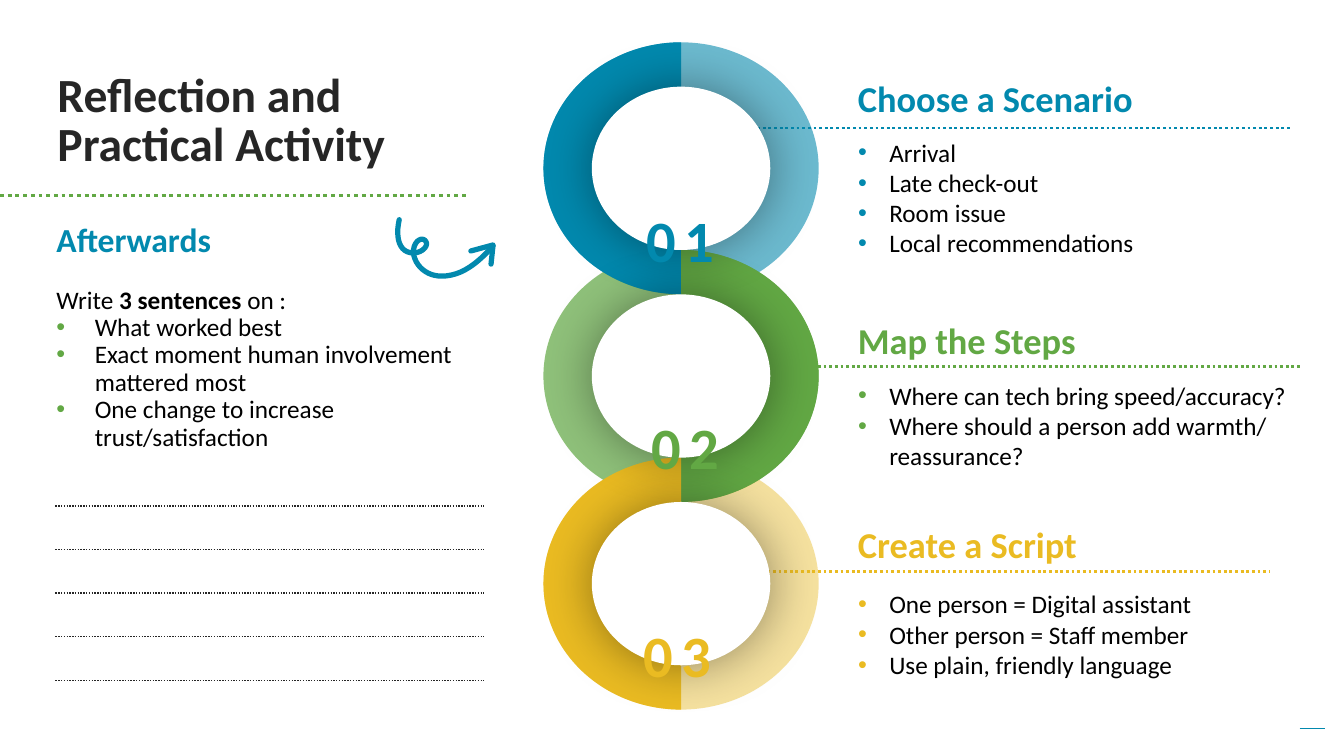
from dataclasses import dataclass
from math import cos, pi, sin

from lxml import etree
from pptx import Presentation
from pptx.dml.color import RGBColor
from pptx.enum.dml import MSO_LINE
from pptx.enum.shapes import MSO_CONNECTOR, MSO_SHAPE
from pptx.enum.text import MSO_ANCHOR, MSO_AUTO_SIZE, PP_ALIGN
from pptx.oxml.ns import qn
from pptx.util import Pt

PX = 9144  # EMU per px, 100 px to the inch
DOTTED = MSO_LINE.ROUND_DOT
STRAIGHT = MSO_CONNECTOR.STRAIGHT
OVAL = MSO_SHAPE.OVAL
TOP = MSO_ANCHOR.TOP
FIXED = MSO_AUTO_SIZE.NONE
LEFT, CENTER = PP_ALIGN.LEFT, PP_ALIGN.CENTER

FONT = "Calibri"
BLUE, GREEN, YELLOW = "0289AE", "62A844", "EABB22"
INK, BLACK, WHITE = "262626", "000000", "FFFFFF"


@dataclass
class Step:
    number: str
    color: str
    light_opacity: int  # percent, for the pale half of the ring
    dark_side: int  # -1 left, 1 right
    number_center: int
    rule: tuple  # x from, x to, y
    heading: str
    heading_top: int
    tasks: list
    tasks_box: tuple


STEPS = [
    Step("01", BLUE, 58, -1, 675, (751, 1279, 127), "Choose a Scenario", 67,
         ["Arrival", "Late check-out", "Room issue", "Local recommendations"],
         (841, 131, 420, 131)),
    Step("02", GREEN, 71, 1, 680, (761, 1289, 364), "Map the Steps", 307,
         ["Where can tech bring speed/accuracy?",
          "Where should a person add warmth/ reassurance?"],
         (841, 372, 471, 101)),
    Step("03", YELLOW, 43, -1, 672, (733, 1260, 567), "Create a Script", 509,
         ["One person = Digital assistant", "Other person = Staff member",
          "Use plain, friendly language"],
         (841, 579, 460, 131)),
]


def rgb(code):
    return RGBColor.from_string(code)


def px(*lengths):
    return [round(length * PX) for length in lengths]


def prepare(shape, box):
    """Place a text shape in its box with plain top-aligned wrapping."""
    shape.left, shape.top, shape.width, shape.height = px(*box)
    frame = shape.text_frame
    frame.word_wrap = True
    frame.auto_size = FIXED
    frame.vertical_anchor = TOP
    return frame


def new_frame(slide, box):
    return prepare(slide.shapes.add_textbox(*px(*box)), box)


def add_text(frame, text, *, size, color=BLACK, bold=False, align=LEFT, spacing=1.0,
             before=0, bullet=None, indent=0, raised=0, tracking=0):
    """Add one paragraph; words between ** marks are bold."""
    paragraph = frame.paragraphs[0] if not frame.text else frame.add_paragraph()
    paragraph.alignment = align
    paragraph.line_spacing = spacing
    paragraph.space_before, paragraph.space_after = Pt(before), Pt(0)
    props = paragraph._p.get_or_add_pPr()
    props.set("marL", str(indent * PX))
    props.set("indent", str(-indent * PX))
    if bullet:
        tint = etree.SubElement(props, qn("a:buClr"))
        etree.SubElement(tint, qn("a:srgbClr")).set("val", bullet)
        etree.SubElement(props, qn("a:buFont")).set("typeface", "Arial")
        etree.SubElement(props, qn("a:buChar")).set("char", "•")
    else:
        etree.SubElement(props, qn("a:buNone"))
    for position, words in enumerate(text.split("**")):
        run = paragraph.add_run()
        run.text = words
        run.font.name, run.font.size = FONT, Pt(size)
        run.font.bold = bold or position % 2 == 1
        run.font.color.rgb = rgb(color)
        if raised:
            run.font._element.set("baseline", str(raised * 1000))
        if tracking:
            run.font._element.set("spc", str(tracking * 100))


def add_rule(slide, x1, x2, y, color, weight, dotted=True):
    rule = slide.shapes.add_connector(STRAIGHT, *px(x1, y, x2, y))
    rule.line.color.rgb = rgb(color)
    rule.line.width = Pt(weight)
    if dotted:
        rule.line.dash_style = DOTTED
    etree.SubElement(rule._element.spPr, qn("a:effectLst"))


def paint(shape, color, opacity=100):
    shape.shadow.inherit = False
    shape.fill.solid()
    shape.fill.fore_color.rgb = rgb(color)
    shape.line.fill.background()
    if opacity < 100:
        tint = shape._element.spPr.find(qn("a:solidFill"))[0]
        etree.SubElement(tint, qn("a:alpha")).set("val", str(opacity * 1000))


def add_glow(shape, opacity, blur):
    effects = shape._element.spPr.find(qn("a:effectLst"))
    shadow = etree.SubElement(effects, qn("a:outerShdw"), blurRad=str(Pt(blur)),
                              dist="0", dir="0", algn="ctr", rotWithShape="0")
    tint = etree.SubElement(shadow, qn("a:srgbClr"), val=BLACK)
    etree.SubElement(tint, qn("a:alpha")).set("val", str(opacity * 1000))


def add_outline(slide, points, close):
    start, *rest = [px(*point) for point in points]
    builder = slide.shapes.build_freeform(*start, scale=1.0)
    builder.add_line_segments(rest, close=close)
    return builder.convert_to_shape()


def add_half_ring(slide, box, side, color):
    left, top, width, height = box
    angles = [pi * i / 90 - pi / 2 for i in range(91)]
    points = [(left + width / 2 * (1 + side * cos(a)), top + height / 2 * (1 + sin(a)))
              for a in angles]
    paint(add_outline(slide, points, close=True), color)


def add_ring_chain(slide, left, top, pitch=206, width=273, height=250):
    boxes = [(left, top + i * pitch, width, height) for i in range(len(STEPS))]
    rings = list(zip(STEPS, boxes))
    # Pale rings and the rules that start inside them
    for step, box in rings:
        paint(slide.shapes.add_shape(OVAL, *px(*box)), step.color, step.light_opacity)
    for step in STEPS:
        add_rule(slide, *step.rule, step.color, 2)
    # Strong halves
    for step, box in rings:
        add_half_ring(slide, box, step.dark_side, step.color)
    # White holes, the middle one in front
    for _, (x, y, w, h) in (rings[0], rings[2], rings[1]):
        hole = slide.shapes.add_shape(OVAL, *px(x + 48, y + 44, w - 96, h - 88))
        paint(hole, WHITE)
        add_glow(hole, 40, 37)
    # Numbers
    for step, (_, y, _, _) in rings:
        frame = new_frame(slide, (step.number_center - 88, y + 83, 176, 148))
        add_text(frame, step.number, size=72, color=step.color, bold=True, align=CENTER,
                 spacing=1.5, raised=30, tracking=6)


def add_step_text(slide, placeholder, step):
    heading = new_frame(slide, (841, step.heading_top, 448, 56))
    add_text(heading, step.heading, size=26, color=step.color, bold=True,
             spacing=Pt(33.8))
    tasks = prepare(placeholder, step.tasks_box)
    for task in step.tasks:
        add_text(tasks, task, size=18, bullet=step.color, indent=31)


def add_title(slide, box):
    add_text(prepare(slide.shapes.title, box), "Reflection and Practical Activity",
             size=34, color=INK, bold=True, spacing=Pt(35.2))
    add_rule(slide, 0, box[0] + box[2], box[1] + 127, GREEN, 2.75)


def add_afterwards(slide, placeholder, box):
    left, top, width, _ = box
    line = Pt(19.6)
    frame = prepare(placeholder, box)
    add_text(frame, "Afterwards", size=24, color=BLUE, bold=True, spacing=line)
    add_text(frame, "Write **3 sentences** on :", size=18, spacing=line, before=19.6)
    for prompt in ("What worked best", "Exact moment human involvement mattered most",
                   "One change to increase trust/satisfaction"):
        add_text(frame, prompt, size=18, spacing=line, bullet=GREEN, indent=38)
    # Lines to write on
    for i in range(5):
        add_rule(slide, left + 9, left + width - 34, top + 277 + 43.25 * i, INK, 1)


def add_curly_arrow(slide, left, top):
    curves = [((2, 18), (6, 33), (20, 33)), ((28, 33), (34, 27), (33, 23)),
              ((31, 16), (20, 19), (20, 33)), ((22, 46), (33, 56), (48, 56)),
              ((68, 56), (84, 43), (99, 26))]
    tail = [(6, 0)]
    for b, c, d in curves:
        a = tail[-1]
        for t in (i / 12 for i in range(1, 13)):
            u = 1 - t
            tail.append(tuple(u**3 * a[k] + 3 * u * u * t * b[k] + 3 * u * t * t * c[k]
                              + t**3 * d[k] for k in (0, 1)))
    head = [(77, 31), (99, 25), (97, 44)]
    for stroke in (tail, head):
        part = add_outline(slide, [(left + x, top + y) for x, y in stroke], close=False)
        part.shadow.inherit = False
        part.fill.background()
        part.line.color.rgb = rgb(BLUE)
        part.line.width = Pt(3.75)
        outline = part.line._get_or_add_ln()
        outline.set("cap", "rnd")
        etree.SubElement(outline, qn("a:round"))


def main():
    deck = Presentation()
    deck.slide_width, deck.slide_height = px(1333, 750)
    slide = deck.slides.add_slide(deck.slide_layouts[4])
    afterwards, *task_lists = list(slide.placeholders)[1:]
    add_rule(slide, 1289, 1314, 723, BLUE, 0.75, dotted=False)
    add_ring_chain(slide, 539, 42)
    add_title(slide, (47, 67, 418, 122))
    for step, placeholder in zip(STEPS, task_lists):
        add_step_text(slide, placeholder, step)
    add_afterwards(slide, afterwards, (46, 225, 468, 236))
    add_curly_arrow(slide, 390, 218)
    deck.save("out.pptx")


if __name__ == "__main__":
    main()
